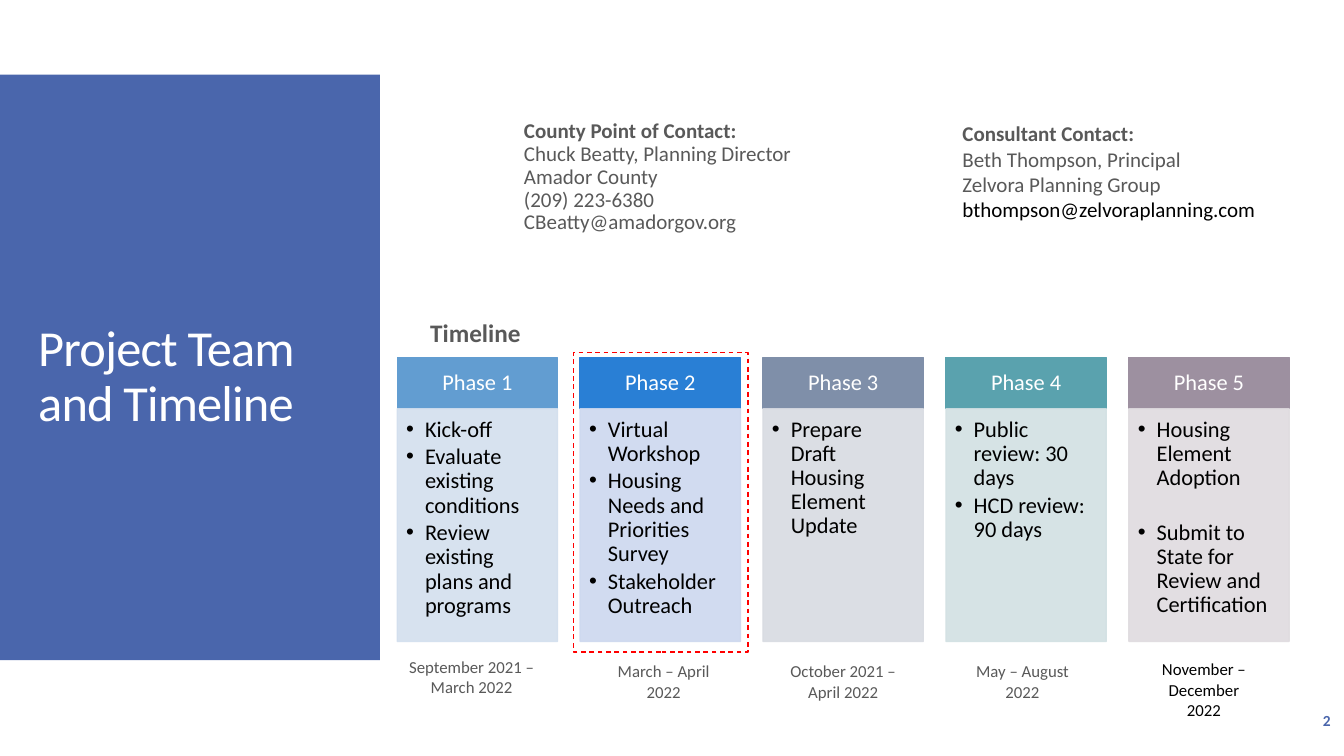
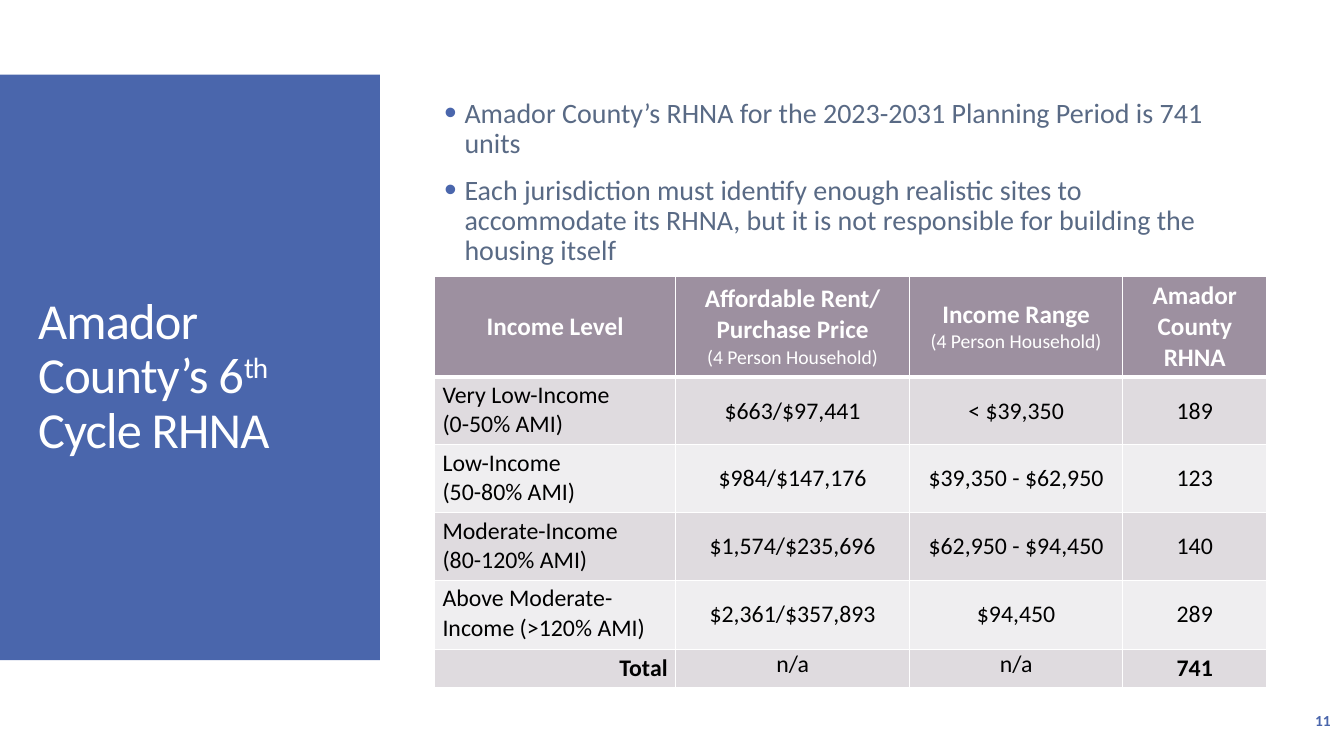
from lxml.etree import SubElement
from pptx import Presentation
from pptx.dml.color import RGBColor
from pptx.enum.dml import MSO_LINE as Dash
from pptx.enum.shapes import MSO_SHAPE as Kind
from pptx.enum.text import MSO_ANCHOR as Anchor, PP_ALIGN as Align
from pptx.oxml.ns import qn
from pptx.util import Pt

FONT = "Calibri"
HEX = {
    "blue": "4A66AC", "white": "FFFFFF", "black": "000000", "red": "FF0000",
    "gray": "595959", "slate": "596A85", "mauve": "9D90A0",
    "dark": "DFDBDF", "light": "EFEEF0",
}
# Header colour, body colour, then bullets as (text, space after)
PHASES = [
    ("629DD1", "D3DFEE", [("Kick-off", 2.5), ("Evaluate existing conditions", 2.5),
                          ("Review existing plans and programs", 0)]),
    ("297FD5", "CDD8EF", [("Virtual Workshop", 2.5),
                          ("Housing Needs and Priorities Survey", 2.5),
                          ("Stakeholder Outreach", 0)]),
    ("7F8FA9", "D8DBE2", [("Prepare Draft Housing Element Update", 0)]),
    ("5AA2AE", "D2E0E3", [("Public review: 30 days", 2.5),
                          ("HCD review: 90 days", 0)]),
    ("9D90A0", "DFDBDF", [("Housing Element Adoption", 22),
                          ("Submit to State for Review and Certification", 0)]),
]
# Text, left, top, width, colour
DATES = [
    ("September 2021 – March 2022", 284.4, 465.8, 105, "gray"),
    ("March – April 2022", 429.1, 468.7, 90, "gray"),
    ("October 2021 – April 2022", 557.3, 468.7, 90, "gray"),
    ("May – August 2022", 681.1, 468.7, 98.6, "gray"),
    ("November – December 2022", 815, 467.3, 90, "black"),
]
COUNTY = ["Chuck Beatty, Planning Director", "Amador County",
          "(209) 223-6380", "CBeatty@amadorgov.org"]
FIRM = ["Beth Thompson, Principal", "Zelvora Planning Group"]
NEEDS = [
    "Amador County’s RHNA for the 2023-2031 Planning Period is 741 units",
    "Each jurisdiction must identify enough realistic sites to accommodate "
    "its RHNA, but it is not responsible for building the housing itself",
]
NOTE = "(4 Person Household)"
HEADS = [["Income Level"], ["Affordable Rent/", "Purchase Price", NOTE],
         ["Income Range", NOTE], ["Amador County RHNA"]]
LEVELS = [
    (["Very Low-Income", "(0-50% AMI)"], "$663/$97,441", "< $39,350", "189"),
    (["Low-Income", "(50-80% AMI)"], "$984/$147,176", "$39,350 - $62,950", "123"),
    (["Moderate-Income", "(80-120% AMI)"], "$1,574/$235,696",
     "$62,950 - $94,450", "140"),
    (["Above Moderate-Income (>120% AMI)"], "$2,361/$357,893", "$94,450", "289"),
    (["Total"], "n/a", "n/a", "741"),
]


def rgb(name):
    return RGBColor.from_string(HEX.get(name, name))


def add_run(para, text, size, color, bold=False, **attrs):
    """Add one run; attrs go to its properties (spc, baseline)."""
    run = para.add_run()
    run.text = text
    font = run.font
    font.name, font.size, font.bold = FONT, Pt(size), bold
    font.color.rgb = rgb(color)
    for key, val in attrs.items():
        font._element.set(key, val)


def add_para(frame, align=Align.LEFT, line=1, before=0, after=0):
    """Use the empty first paragraph, or add one below."""
    para = frame.paragraphs[0]
    if para.runs:
        para = frame.add_paragraph()
        para.space_before = Pt(before)
    para.alignment, para.line_spacing, para.space_after = align, line, Pt(after)
    return para


def add_dot(para, indent, color=None, scale=None):
    """Give the paragraph a hanging bullet."""
    props = para._p.get_or_add_pPr()
    props.set("marL", str(Pt(indent)))
    props.set("indent", str(-Pt(indent)))
    if color:
        tint = SubElement(props, qn("a:buClr"))
        SubElement(tint, qn("a:srgbClr"), val=HEX[color])
    if scale:
        SubElement(props, qn("a:buSzPct"), val=str(scale * 1000))
    SubElement(props, qn("a:buFont"), typeface="Arial")
    SubElement(props, qn("a:buChar"), char="•")


def set_frame(frame, anchor, pads):
    frame.word_wrap = True
    frame.vertical_anchor = anchor
    (frame.margin_left, frame.margin_top,
     frame.margin_right, frame.margin_bottom) = map(Pt, pads)
    return frame


def add_text(slide, left, top, width, height, anchor=Anchor.TOP):
    """Add an empty text box and return its frame."""
    box = slide.shapes.add_textbox(Pt(left), Pt(top), Pt(width), Pt(height))
    return set_frame(box.text_frame, anchor, (7.2, 3.6, 7.2, 3.6))


def add_rect(slide, left, top, width, height, fill=None, line=None):
    rect = slide.shapes.add_shape(Kind.RECTANGLE, Pt(left), Pt(top),
                                  Pt(width), Pt(height))
    rect.shadow.inherit = False
    if fill:
        rect.fill.solid()
        rect.fill.fore_color.rgb = rgb(fill)
    else:
        rect.fill.background()
    if line:
        rect.line.color.rgb = rgb(line)
        rect.line.width = Pt(0.85)
    else:
        rect.line.fill.background()
    return rect


def fade(shape, share):
    """Make fill and line partly clear."""
    for tint in shape.element.spPr.iter(qn("a:srgbClr")):
        SubElement(tint, qn("a:alpha"), val=str(share * 1000))


def add_base(deck, title, page):
    """Add a slide with side panel, title runs and page number."""
    slide = deck.slides.add_slide(deck.slide_layouts[6])
    add_rect(slide, 0, 53.3, 271.4, 418.3, "blue")
    para = add_para(add_text(slide, 20.2, 88.6, 231.8, 362.2, Anchor.MIDDLE), line=0.9)
    for text, attrs in title:
        add_run(para, text, 36, "white", spc="-60", **attrs)
    frame = add_text(slide, 837.4, 500.4, 120.2, 28.8, Anchor.MIDDLE)
    add_run(add_para(frame, Align.RIGHT), page, 11, "blue", True)
    return slide


def add_card(slide, left, top, width, head, lines, line=1):
    """Add a contact: bold heading, then (text, colour) lines."""
    frame = add_text(slide, left, top, width, 80)
    add_run(add_para(frame, line=line), head, 15, "gray", True)
    for text, color in lines:
        add_run(add_para(frame, line=line), text, 15, color)


def add_phase(slide, num, left, color, tint, tasks):
    head = add_rect(slide, left, 255.6, 114.6, 36.4, color, color)
    frame = set_frame(head.text_frame, Anchor.MIDDLE, (8.6, 5, 8.6, 5))
    add_run(add_para(frame, Align.CENTER, 0.9), f"Phase {num}", 16, "white")
    body = add_rect(slide, left, 292, 114.6, 166.2, tint, tint)
    fade(body, 90)
    frame = set_frame(body.text_frame, Anchor.TOP, (6.4, 6.4, 8.6, 9.6))
    for text, after in tasks:
        para = add_para(frame, line=0.9, after=after)
        add_dot(para, 13.5)
        add_run(para, text, 16, "black")


def add_edges(cell, base):
    """Draw white borders; base is the width of the lower one."""
    props = cell._tc.get_or_add_tcPr()
    for spot, (side, width) in enumerate(
            [("lnL", 1), ("lnR", 1), ("lnT", 1), ("lnB", base)]):
        edge = SubElement(props, qn(f"a:{side}"), w=str(Pt(width)))
        fill = SubElement(edge, qn("a:solidFill"))
        SubElement(fill, qn("a:srgbClr"), val=HEX["white"])
        props.insert(spot, edge)


def fill_cell(cell, lines, fill, align, anchor, pads, color, size, bold, base=1):
    cell.fill.solid()
    cell.fill.fore_color.rgb = rgb(fill)
    cell.vertical_anchor = anchor
    (cell.margin_left, cell.margin_top,
     cell.margin_right, cell.margin_bottom) = map(Pt, pads)
    for text in lines:
        small = text == NOTE
        add_run(add_para(cell.text_frame, align), text, 14 if small else size,
                color, bold and not small)
    add_edges(cell, base)


def add_grid(slide):
    """Add the table of income levels."""
    widths = [172.4, 167, 152.3, 103]
    heights = [72, 48.4, 48.4, 48.4, 49.4, 27]
    grid = slide.shapes.add_table(6, 4, Pt(310.3), Pt(197.3),
                                  Pt(sum(widths)), Pt(sum(heights))).table
    for col, width in zip(grid.columns, widths):
        col.width = Pt(width)
    for row, height in zip(grid.rows, heights):
        row.height = Pt(height)
    wide, slim = (5.8, 2.9, 5.8, 2.9), (5, 0, 5, 0)
    for c, lines in enumerate(HEADS):
        fill_cell(grid.cell(0, c), lines, "mauve", Align.CENTER, Anchor.MIDDLE,
                  wide, "white", 18, True, 3)
    for r, (level, *vals) in enumerate(LEVELS, 1):
        fill = "dark" if r % 2 else "light"
        total = r == len(LEVELS)
        fill_cell(grid.cell(r, 0), level, fill, Align.RIGHT if total else Align.LEFT,
                  Anchor.TOP, wide, "black", 17, total)
        for c, val in enumerate(vals, 1):
            anchor = Anchor.TOP if val == "n/a" else Anchor.MIDDLE
            fill_cell(grid.cell(r, c), [val], fill, Align.CENTER, anchor, slim,
                      "black", 17, total and c == 3)


def add_team(deck):
    slide = add_base(deck, [("Project Team and Timeline", {})], "2")
    for num, phase in enumerate(PHASES, 1):
        add_phase(slide, num, 283.7 + 130.65 * (num - 1), *phase)
    add_run(add_para(add_text(slide, 300.2, 223.2, 360, 29)), "Timeline", 18,
            "gray", True)
    for text, left, top, width, color in DATES:
        frame = add_text(slide, left, top, width, 36)
        add_run(add_para(frame, Align.CENTER), text, 12, color)
    frame = add_rect(slide, 409.7, 252, 124.6, 213.8, line="red")
    frame.line.dash_style = Dash.DASH
    add_card(slide, 367.2, 82.8, 219.6, "County Point of Contact:",
             [(text, "gray") for text in COUNTY], 0.9)
    add_card(slide, 680.4, 82.8, 240.5, "Consultant Contact:",
             [(text, "gray") for text in FIRM]
             + [("bthompson@zelvoraplanning.com", "black")])


def add_needs(deck):
    slide = add_base(deck, [("Amador County’s 6", {}), ("th", {"baseline": "30000"}),
                            (" Cycle RHNA", {})], "11")
    frame = add_text(slide, 310.3, 64.1, 583.9, 133.2, Anchor.MIDDLE)
    for text in NEEDS:
        para = add_para(frame, line=0.9, before=12)
        add_dot(para, 14.4, "blue", 125)
        add_run(para, text, 20, "slate")
    add_grid(slide)


def main():
    deck = Presentation()
    deck.slide_width, deck.slide_height = Pt(960), Pt(540)
    add_team(deck)
    add_needs(deck)
    deck.save("out.pptx")


if __name__ == "__main__":
    main()
